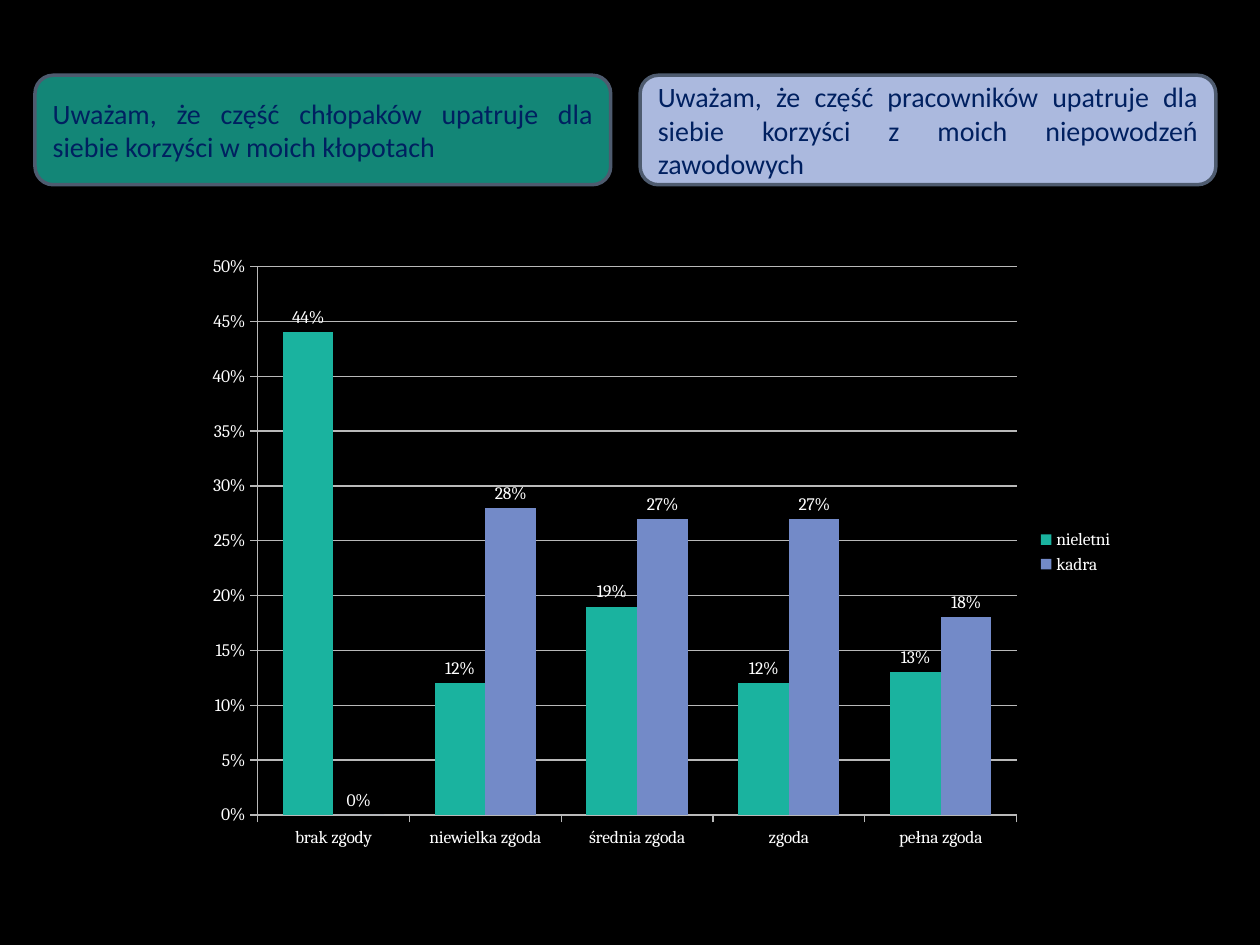
from pptx import Presentation
from pptx.chart.data import CategoryChartData
from pptx.dml.color import RGBColor
from pptx.enum.chart import (XL_CHART_TYPE, XL_LABEL_POSITION,
                             XL_LEGEND_POSITION, XL_TICK_MARK)
from pptx.enum.shapes import MSO_SHAPE
from pptx.enum.text import MSO_ANCHOR, PP_ALIGN
from pptx.util import Pt

BLACK = RGBColor(0x00, 0x00, 0x00)
WHITE = RGBColor(0xFF, 0xFF, 0xFF)
GREY = RGBColor(0xB9, 0xB9, 0xB9)
SLATE = RGBColor(0x4E, 0x5B, 0x6F)
NAVY = RGBColor(0x00, 0x20, 0x60)
DARK_TEAL = RGBColor(0x13, 0x86, 0x77)
PALE_BLUE = RGBColor(0xAB, 0xB9, 0xDE)
TEAL = RGBColor(0x1A, 0xB3, 0x9F)
BLUE = RGBColor(0x73, 0x8A, 0xC8)

STATEMENTS = [
    ("Uważam, że część chłopaków upatruje dla siebie korzyści "
     "w moich kłopotach", DARK_TEAL),
    ("Uważam, że część pracowników upatruje dla siebie korzyści "
     "z moich niepowodzeń zawodowych", PALE_BLUE),
]
ANSWERS = ["brak zgody", "niewielka zgoda", "średnia zgoda", "zgoda", "pełna zgoda"]
GROUPS = [
    ("nieletni", [0.44, 0.12, 0.19, 0.12, 0.13], TEAL),
    ("kadra", [0, 0.28, 0.27, 0.27, 0.18], BLUE),
]


def set_format(target, values):
    for attribute, value in values.items():
        setattr(target, attribute, value)


class SurveySlide:
    statement_font = {"name": "Calibri", "size": Pt(16)}
    chart_font = {"name": "Cambria", "size": Pt(10), "bold": False}
    percent = "0%"

    def __init__(self, slide):
        self.slide = slide
        background = slide.background.fill
        background.solid()
        background.fore_color.rgb = BLACK

    def style_font(self, font, values, color):
        set_format(font, values)
        font.color.rgb = color

    def style_line(self, line, color, width):
        line.color.rgb = color
        line.width = Pt(width)

    def statement(self, text, fill, left, top, width, height):
        box = self.slide.shapes.add_shape(
            MSO_SHAPE.ROUNDED_RECTANGLE, Pt(left), Pt(top), Pt(width), Pt(height))
        box.shadow.inherit = False
        box.fill.solid()
        box.fill.fore_color.rgb = fill
        self.style_line(box.line, SLATE, 2)
        set_format(box.text_frame,
                   {"word_wrap": True, "vertical_anchor": MSO_ANCHOR.MIDDLE})
        paragraph = box.text_frame.paragraphs[0]
        paragraph.alignment = PP_ALIGN.JUSTIFY
        run = paragraph.add_run()
        run.text = text
        self.style_font(run.font, self.statement_font, NAVY)

    def column_chart(self, categories, groups, left, top, width, height):
        data = CategoryChartData(number_format=self.percent)
        data.categories = categories
        for name, shares, _ in groups:
            data.add_series(name, shares)
        chart = self.slide.shapes.add_chart(
            XL_CHART_TYPE.COLUMN_CLUSTERED, Pt(left), Pt(top), Pt(width),
            Pt(height), data).chart
        set_format(chart, {"has_title": False, "has_legend": True})
        self.style_font(chart.font, self.chart_font, WHITE)
        set_format(chart.legend, {"position": XL_LEGEND_POSITION.RIGHT,
                                  "include_in_layout": False})
        self.style_font(chart.legend.font, self.chart_font, WHITE)

        for axis in (chart.category_axis, chart.value_axis):
            set_format(axis, {"major_tick_mark": XL_TICK_MARK.OUTSIDE,
                              "minor_tick_mark": XL_TICK_MARK.NONE})
            self.style_font(axis.tick_labels.font, self.chart_font, WHITE)
            self.style_line(axis.format.line, GREY, 0.75)
        set_format(chart.value_axis, {"minimum_scale": 0, "maximum_scale": 0.5,
                                      "major_unit": 0.05})
        set_format(chart.value_axis.tick_labels,
                   {"number_format": self.percent, "number_format_is_linked": False})
        self.style_line(chart.value_axis.major_gridlines.format.line, GREY, 0.75)

        plot = chart.plots[0]
        set_format(plot, {"gap_width": 100, "overlap": 0, "vary_by_categories": False})
        for series, (_, _, color) in zip(plot.series, groups):
            series.invert_if_negative = False
            series.format.fill.solid()
            series.format.fill.fore_color.rgb = color
            labels = series.data_labels
            set_format(labels, {"show_value": True, "number_format": self.percent,
                                "number_format_is_linked": False,
                                "position": XL_LABEL_POSITION.OUTSIDE_END})
            self.style_font(labels.font, self.chart_font, WHITE)


def main():
    presentation = Presentation()
    set_format(presentation, {"slide_width": Pt(720), "slide_height": Pt(540)})
    blank_layout = presentation.slide_layouts[6]
    survey = SurveySlide(presentation.slides.add_slide(blank_layout))
    survey.column_chart(ANSWERS, GROUPS, 110.9, 139.7, 532.8, 351.4)
    statement_left, statement_step = 20, 345.8
    for column, (text, fill) in enumerate(STATEMENTS):
        survey.statement(text, fill, statement_left + column * statement_step,
                         43, 329, 62.6)
    presentation.save("out.pptx")


if __name__ == "__main__":
    main()
